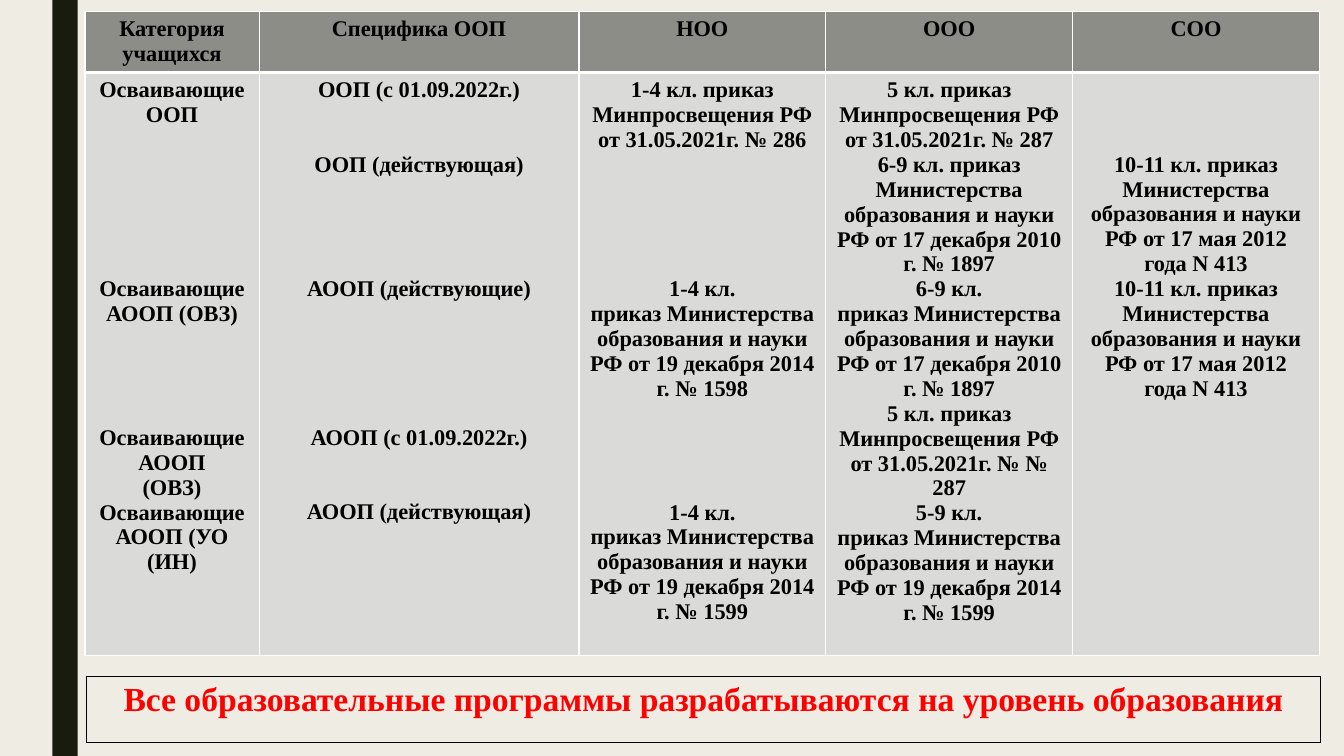
import pptx
import pptx.util
import pptx.dml.color
import pptx.enum.shapes
import pptx.enum.text
import pptx.oxml
import pptx.oxml.ns
from pptx.util import Cm

RGBColor = pptx.dml.color.RGBColor
CREAM = RGBColor(0xEF, 0xED, 0xE3)
DARK_OLIVE = RGBColor(0x19, 0x1B, 0x0E)
HEADER_GRAY = RGBColor(0x8C, 0x8D, 0x86)
BODY_GRAY = RGBColor(0xDA, 0xDB, 0xD9)
WHITE = RGBColor(0xFF, 0xFF, 0xFF)
BLACK = RGBColor(0, 0, 0)
RED = RGBColor(0xFF, 0, 0)

FONT = "Times New Roman"
LINE_HEIGHT = 17.72  # points taken by one line of 16 pt text

HEADERS = ["Категория учащихся", "Специфика ООП", "НОО", "ООО", "СОО"]
COLUMN_WIDTHS = [4.39, 8.06, 6.22, 6.22, 6.22]
ORDER_2012 = ("10-11 кл. приказ Министерства образования и науки РФ "
              "от 17 мая 2012 года N 413")
ORDER_START = "приказ Министерства образования и науки РФ от "
ORDER_2010 = ORDER_START + "17 декабря 2010 г. № 1897"
ORDER_2014 = ORDER_START + "19 декабря 2014 г. № "

# Each column holds pairs: free lines above, text
PROGRAMS = [
    [(0, "Осваивающие ООП"), (6, "Осваивающие АООП (ОВЗ)"),
     (4, "Осваивающие АООП"), (0, "(ОВЗ)"), (0, "Осваивающие АООП (УО (ИН)")],
    [(0, "ООП (с 01.09.2022г.)"), (2, "ООП (действующая)"),
     (4, "АООП (действующие)"), (5, "АООП (с 01.09.2022г.)"),
     (2, "АООП (действующая)")],
    [(0, "1-4 кл. приказ Минпросвещения РФ от 31.05.2021г. № 286"),
     (5, "1-4 кл."), (0, ORDER_2014 + "1598"),
     (4, "1-4 кл."), (0, ORDER_2014 + "1599")],
    [(0, "5 кл. приказ Минпросвещения РФ от 31.05.2021г. № 287"),
     (0, "6-9 кл. " + ORDER_2010), (0, "6-9 кл."), (0, ORDER_2010),
     (0, "5 кл. приказ Минпросвещения РФ от 31.05.2021г. № № 287"),
     (0, "5-9 кл."), (0, ORDER_2014 + "1599")],
    [(3, ORDER_2012), (0, ORDER_2012)],
]


def write(paragraph, text, size=16, color=BLACK, bold=True, space_before=0):
    paragraph.alignment = pptx.enum.text.PP_ALIGN.CENTER
    paragraph.space_before = pptx.util.Pt(space_before)
    run = paragraph.add_run()
    run.text = text
    run.font.name = FONT
    run.font.size = pptx.util.Pt(size)
    run.font.bold = bold
    run.font.color.rgb = color


class SlideBuilder:
    def __init__(self, presentation):
        self.slide = presentation.slides.add_slide(presentation.slide_layouts[6])

    def background(self, color):
        fill = self.slide.background.fill
        fill.solid()
        fill.fore_color.rgb = color

    def bar(self, left, top, width, height, color):
        shape = self.slide.shapes.add_shape(
            pptx.enum.shapes.MSO_SHAPE.RECTANGLE,
            Cm(left), Cm(top), Cm(width), Cm(height))
        shape.shadow.inherit = False
        shape.fill.solid()
        shape.fill.fore_color.rgb = color
        shape.line.fill.background()

    def table(self, left, top, widths, heights):
        table = self.slide.shapes.add_table(
            len(heights), len(widths), Cm(left), Cm(top),
            Cm(sum(widths)), Cm(sum(heights))).table
        table.first_row = table.horz_banding = False
        for column, width in zip(table.columns, widths):
            column.width = Cm(width)
        for row, height in zip(table.rows, heights):
            row.height = Cm(height)
        return table

    def cell(self, cell, entries, fill=None, border=WHITE, top=1, bottom=1,
             **text_format):
        if fill is None:
            cell.fill.background()
        else:
            cell.fill.solid()
            cell.fill.fore_color.rgb = fill
        self.borders(cell, border, {"L": 1, "R": 1, "T": top, "B": bottom})
        # Free lines above the first entry go into the cell margin
        cell.margin_top = Cm(0.13) + pptx.util.Pt(entries[0][0] * LINE_HEIGHT)
        for index, (free_lines, text) in enumerate(entries):
            frame = cell.text_frame
            paragraph = frame.add_paragraph() if index else frame.paragraphs[0]
            space = free_lines * LINE_HEIGHT if index else 0
            write(paragraph, text, space_before=space, **text_format)

    def borders(self, cell, color, widths):
        properties = cell._tc.get_or_add_tcPr()
        for index, (side, width) in enumerate(widths.items()):
            properties.insert(index, pptx.oxml.parse_xml(
                f'<a:ln{side} {pptx.oxml.ns.nsdecls("a")} w="{width * 12700}">'
                f'<a:solidFill><a:srgbClr val="{color}"/></a:solidFill>'
                f'</a:ln{side}>'))


def main():
    presentation = pptx.Presentation()
    presentation.slide_width = Cm(33.87)
    presentation.slide_height = Cm(19.05)
    builder = SlideBuilder(presentation)

    # Background and side bar
    builder.background(CREAM)
    builder.bar(1.32, 0, 0.64, 19.05, DARK_OLIVE)

    # Programs by category and school level
    programs = builder.table(2.14, 0.28, COLUMN_WIDTHS, [1.55, 14.68])
    for column, (header, entries) in enumerate(zip(HEADERS, PROGRAMS)):
        builder.cell(programs.cell(0, column), [(0, header)],
                     fill=HEADER_GRAY, bottom=3)
        builder.cell(programs.cell(1, column), entries, fill=BODY_GRAY, top=3)

    # Conclusion
    conclusion = builder.table(2.18, 17.04, [31.09], [1.68])
    builder.cell(
        conclusion.cell(0, 0),
        [(0, "Все образовательные программы разрабатываются на уровень образования")],
        border=BLACK, size=24, color=RED)

    presentation.save("out.pptx")


if __name__ == "__main__":
    main()
